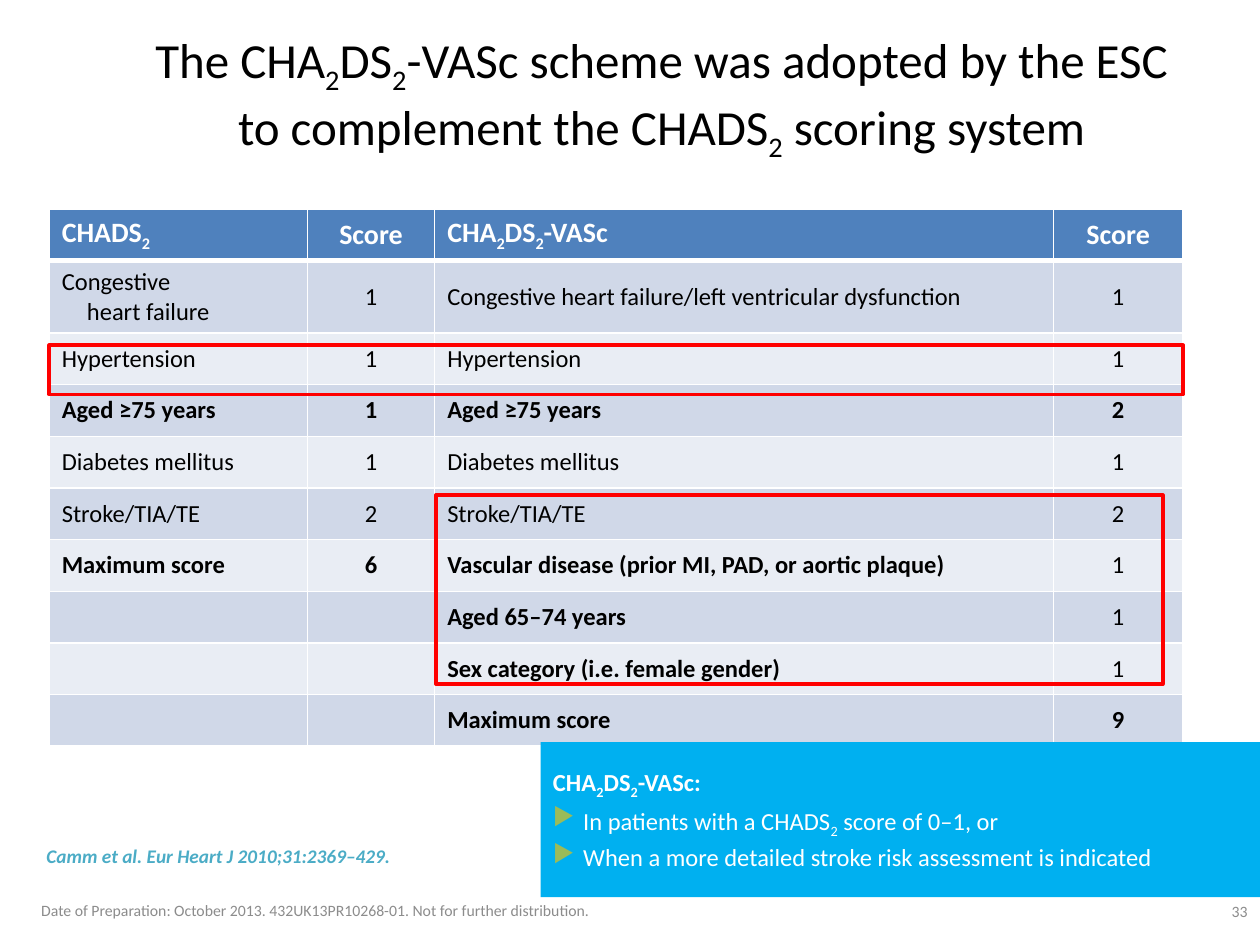
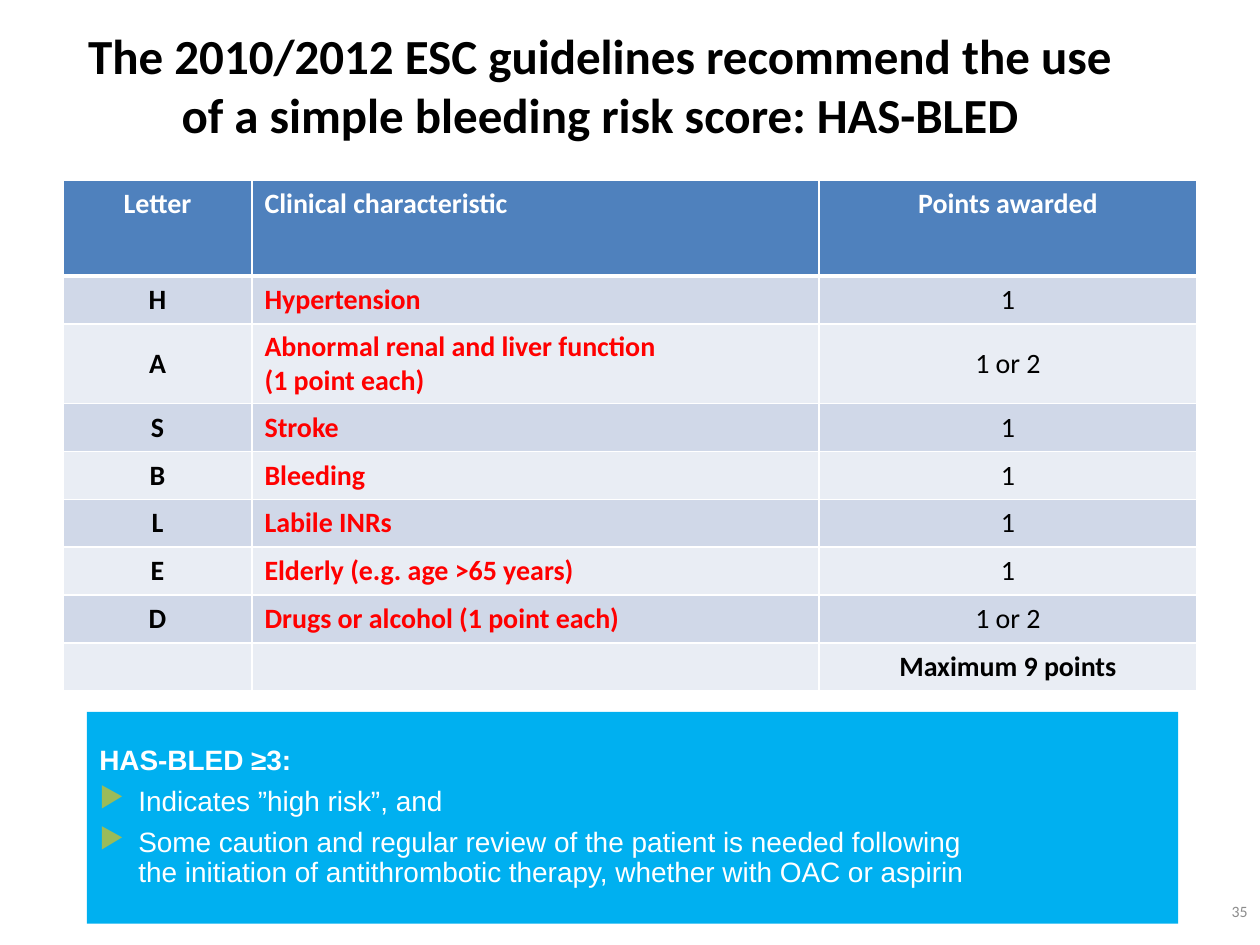
from lxml import etree
from pptx import Presentation
from pptx.dml.color import RGBColor
from pptx.enum.shapes import MSO_SHAPE
from pptx.enum.text import MSO_ANCHOR, PP_ALIGN
from pptx.oxml.ns import qn
from pptx.util import Inches, Pt

RECTANGLE = MSO_SHAPE.RECTANGLE
LEFT, CENTER, RIGHT = PP_ALIGN.LEFT, PP_ALIGN.CENTER, PP_ALIGN.RIGHT
TOP, MIDDLE, BOTTOM = MSO_ANCHOR.TOP, MSO_ANCHOR.MIDDLE, MSO_ANCHOR.BOTTOM

COLORS = {
    "text": "000000",
    "white": "FFFFFF",
    "header": "4F81BD",
    "band_dark": "D0D8E8",
    "band_light": "E9EDF4",
    "red": "FF0000",
    "callout": "00B0F0",
    "bullet": "9BBB59",
    "citation": "4BACC6",
    "footer": "8C8C8C",
}


def rgb(name):
    return RGBColor.from_string(COLORS[name])


def write(para, text, size=14, color="text", bold=False, italic=False,
          font="Calibri", align=LEFT):
    """Fill a paragraph; "_" lowers the next character, a newline breaks the line."""
    para.alignment = align

    def add_span(words, lowered=False):
        if not words:
            return
        span = para.add_run()
        span.text = words
        span.font.name, span.font.size = font, Pt(size)
        span.font.bold, span.font.italic = bold, italic
        span.font.color.rgb = rgb(color)
        if lowered:
            span.font._element.set("baseline", "-25000")

    for number, line in enumerate(text.split("\n")):
        if number:
            para.add_line_break()
        first, *rest = line.split("_")
        add_span(first)
        for piece in rest:
            add_span(piece[0], lowered=True)
            add_span(piece[1:])


def set_indent(para, hanging):
    properties = para._p.get_or_add_pPr()
    properties.set("marL", str(Inches(hanging)))
    properties.set("indent", str(-Inches(hanging)))
    return properties


def add_bullet(para, hanging):
    properties = set_indent(para, hanging)
    bullet_color = etree.SubElement(properties, qn("a:buClr"))
    etree.SubElement(bullet_color, qn("a:srgbClr"), val=COLORS["bullet"])
    etree.SubElement(properties, qn("a:buChar"), char="▶")


def add_text(page, text, left, top, width, height, anchor=MIDDLE, **text_format):
    box = page.shapes.add_textbox(Inches(left), Inches(top), Inches(width), Inches(height))
    frame = box.text_frame
    frame.word_wrap = True
    frame.vertical_anchor = anchor
    write(frame.paragraphs[0], text, **text_format)


def add_title(page, text, width, height, bold=False):
    add_text(page, text, 0.5, 0.1, width, height, size=28, bold=bold, align=CENTER)


def add_page_number(page, number):
    add_text(page, number, 7.67, 7.11, 2.33, 0.22, anchor=TOP,
             size=9, color="footer", align=RIGHT)


def add_rectangle(page, left, top, width, height, fill=None, line=None):
    box = page.shapes.add_shape(RECTANGLE, Inches(left), Inches(top),
                                Inches(width), Inches(height))
    box.shadow.inherit = False
    if fill:
        box.fill.solid()
        box.fill.fore_color.rgb = rgb(fill)
    else:
        box.fill.background()
    if line:
        box.line.color.rgb = rgb(line)
        box.line.width = Pt(2)
    else:
        box.line.fill.background()
    return box


def add_callout(page, left, top, width, height, heading, points, hanging, size, font):
    frame = add_rectangle(page, left, top, width, height, fill="callout").text_frame
    frame.word_wrap = True
    frame.vertical_anchor = MIDDLE
    text_format = {"size": size, "font": font, "color": "white"}
    para = frame.paragraphs[0]
    para.line_spacing = 0.9
    write(para, heading, bold=True, **text_format)
    for point in points:
        para = frame.add_paragraph()
        para.line_spacing = 0.9
        para.space_before = Pt(round(size * 0.36))
        add_bullet(para, hanging)
        write(para, point, **text_format)


def set_borders(cell, bottom):
    properties = cell._tc.get_or_add_tcPr()
    for side, points in (("L", 1), ("R", 1), ("T", 1), ("B", bottom)):
        border = etree.SubElement(properties, qn(f"a:ln{side}"), w=str(Pt(points)))
        fill = etree.SubElement(border, qn("a:solidFill"))
        etree.SubElement(fill, qn("a:srgbClr"), val=COLORS["white"])


def add_score_table(page, left, top, widths, heights, rows, columns, size,
                    header_anchor=MIDDLE, hanging=0):
    """Columns hold the text format of each column; a leading "*" makes a cell bold."""
    frame = page.shapes.add_table(len(rows), len(widths), Inches(left), Inches(top),
                                  Inches(sum(widths)), Inches(sum(heights)))
    table = frame.table
    for column, width in zip(table.columns, widths):
        column.width = Inches(width)
    for row, height in zip(table.rows, heights):
        row.height = Inches(height)

    for row_number, row in enumerate(rows):
        is_header = row_number == 0
        band = "header" if is_header else ("band_light", "band_dark")[row_number % 2]
        for column_number, text in enumerate(row):
            cell = table.cell(row_number, column_number)
            set_borders(cell, bottom=3 if is_header else 1)
            cell.fill.solid()
            cell.fill.fore_color.rgb = rgb(band)
            cell.vertical_anchor = header_anchor if is_header else MIDDLE
            para = cell.text_frame.paragraphs[0]
            if not text:
                para._p.get_or_add_endParaRPr().set("sz", str(size * 100))
                continue
            text_format = dict(columns[column_number])
            if is_header:
                text_format.update(size=16, color="white", bold=True)
            else:
                text_format["size"] = size
                if text.startswith("*"):
                    text_format["bold"] = True
            if hanging and text_format.get("align") != CENTER:
                set_indent(para, hanging)
            write(para, text.lstrip("*"), **text_format)


def build_stroke_slide(page):
    rows = [
        ["CHADS_2", "Score", "CHA_2DS_2-VASc", "Score"],
        ["Congestive\nheart failure", "1",
         "Congestive heart failure/left ventricular dysfunction", "1"],
        ["Hypertension", "1", "Hypertension", "1"],
        ["*Aged ≥75 years", "*1", "*Aged ≥75 years", "*2"],
        ["Diabetes mellitus", "1", "Diabetes mellitus", "1"],
        ["Stroke/TIA/TE", "2", "Stroke/TIA/TE", "2"],
        ["*Maximum score", "*6", "*Vascular disease (prior MI, PAD, or aortic plaque)", "1"],
        ["", "", "*Aged 65–74 years", "1"],
        ["", "", "*Sex category (i.e. female gender)", "1"],
        ["", "", "*Maximum score", "*9"],
    ]
    names, scores = {}, {"align": CENTER}
    add_score_table(page, 0.39, 1.66, [2.05, 1.01, 4.91, 1.03], [0.41, 0.56] + [0.41] * 8,
                    rows, [names, scores, names, scores], size=14, hanging=0.2)
    add_title(page, "The CHA_2DS_2-VASc scheme was adopted by the ESC\n"
              "to complement the CHADS_2 scoring system", 9.5, 1.33)
    add_page_number(page, "33")

    # Highlighted criteria
    add_rectangle(page, 0.39, 2.74, 9, 0.39, line="red")
    add_rectangle(page, 3.46, 3.93, 5.77, 1.5, line="red")

    add_callout(page, 4.29, 5.89, 5.71, 1.23, "CHA_2DS_2-VASc:",
                ["In patients with a CHADS_2 score of 0–1, or",
                 "When a more detailed stroke risk assessment is indicated"],
                hanging=0.24, size=14, font="Calibri")

    # Citation and footer
    add_text(page, "Camm et al. Eur Heart J 2010;31:2369–429.", 0.27, 6.66, 8.54, 0.27,
             anchor=BOTTOM, size=11, color="citation", bold=True, italic=True)
    add_text(page, "Date of Preparation: October 2013. 432UK13PR10268-01. "
             "Not for further distribution.", 0, 7.1, 5, 0.25,
             size=9, color="footer", align=CENTER)


def build_bleeding_slide(page):
    rows = [
        ["Letter", "Clinical characteristic", "Points awarded"],
        ["H", "Hypertension", "1"],
        ["A", "Abnormal renal and liver function\n(1 point each)", "1 or 2"],
        ["S", "Stroke", "1"],
        ["B", "Bleeding", "1"],
        ["L", "Labile INRs", "1"],
        ["E", "Elderly (e.g. age >65 years)", "1"],
        ["D", "Drugs or alcohol (1 point each)", "1 or 2"],
        ["", "", "*Maximum 9 points"],
    ]
    columns = [{"bold": True, "align": CENTER}, {"bold": True, "color": "red"},
               {"align": CENTER}]
    add_score_table(page, 0.5, 1.43, [1.5, 4.5, 3], [0.76, 0.38, 0.63] + [0.38] * 6,
                    rows, columns, size=16, header_anchor=TOP)
    add_title(page, "The 2010/2012 ESC guidelines recommend the use\n"
              "of a simple bleeding risk score: HAS-BLED", 8.52, 1.14, bold=True)
    add_page_number(page, "35")
    add_callout(page, 0.69, 5.65, 8.66, 1.68, "HAS-BLED ≥3:",
                ["Indicates ”high risk”, and",
                 "Some caution and regular review of the patient is needed following\n"
                 "the initiation of antithrombotic therapy, whether with OAC or aspirin"],
                hanging=0.31, size=16, font="Arial")


def main():
    deck = Presentation()
    deck.slide_width, deck.slide_height = Inches(10), Inches(7.5)
    blank = deck.slide_layouts[6]
    for build in (build_stroke_slide, build_bleeding_slide):
        build(deck.slides.add_slide(blank))
    deck.save("out.pptx")


if __name__ == "__main__":
    main()
